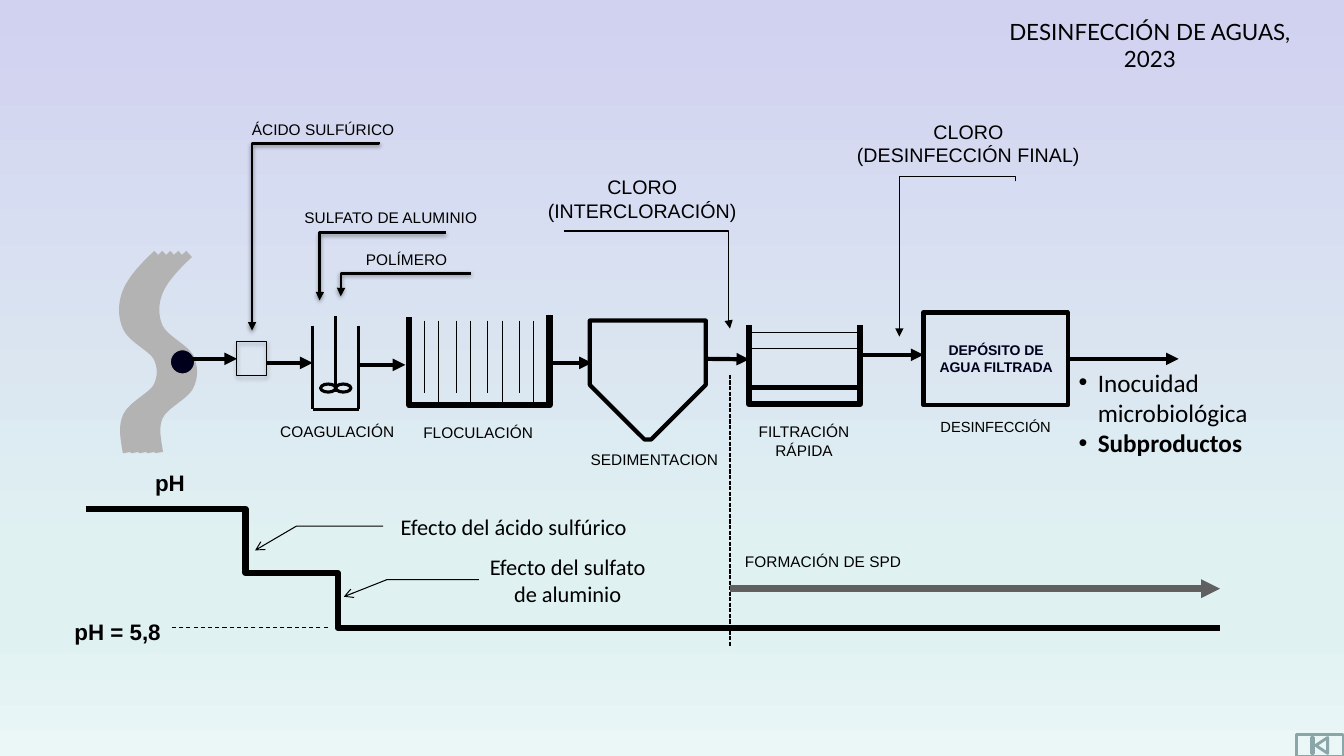
from lxml import etree
from pptx import Presentation
from pptx import util as u
from pptx.dml import color
from pptx.enum import dml, shapes, text
from pptx.oxml import ns

SHAPE = shapes.MSO_SHAPE
LEFT, MID = text.PP_ALIGN.LEFT, text.PP_ALIGN.CENTER


class Theme:
    black, navy, mud, gray, sage = "000000", "00001C", "B3B3B3", "606060", "8AA6A8"
    sky = [(0, "D1D1F0"), (74, "E0F1F2"), (83, "E0F1F2"), (100, "EBF6F7")]
    type = {
        "head": dict(name="Lato", size=u.Pt(16)),
        "tag": dict(name="Arial", size=u.Pt(11)),
        "small": dict(name="Arial", size=u.Pt(10.5)),
        "dose": dict(name="Arial", size=u.Pt(14)),
        "ph": dict(name="Arial", size=u.Pt(16), bold=True),
        "tank": dict(name="Arial", size=u.Pt(10), bold=True),
        "note": dict(name="Calibri", size=u.Pt(16)),
        "list": dict(name="Calibri", size=u.Pt(18)),
        "strong": dict(name="Calibri", size=u.Pt(18), bold=True),
    }


def node(parent, tag, **attrs):
    return etree.SubElement(parent, ns.qn(tag), {k: str(v) for k, v in attrs.items()})


class Scene:
    """Draws on one slide; lengths are columns and rows of a tenth of an inch."""
    unit = u.Inches(0.1)

    def __init__(self, deck, theme):
        self.theme = theme
        self.slide = deck.slides.add_slide(deck.slide_layouts[6])
        self.pool = self.slide.shapes

    def emu(self, *cells):
        return [round(cell * self.unit) for cell in cells]

    def group(self):
        self.pool = self.slide.shapes.add_group_shape().shapes

    def loose(self):
        self.pool = self.slide.shapes

    def sky(self):
        fill = self.slide.background.fill
        fill.gradient()
        fill.gradient_angle = 270
        stops = self.slide._element.find(".//" + ns.qn("a:gsLst"))
        for stop in list(stops):
            stops.remove(stop)
        for share, tint in self.theme.sky:
            node(node(stops, "a:gs", pos=share * 1000), "a:srgbClr", val=tint)

    def pen(self, item, width=3, tint=Theme.black, dash=None, tip=None, shade=False):
        """Set the outline, arrowhead and shadow of a shape or connector."""
        item.line.color.rgb = color.RGBColor.from_string(tint)
        for key, val in dict(width=u.Pt(width), dash_style=dash).items():
            setattr(item.line, key, val)
        props = item._element.spPr
        if tip:
            node(props.find(ns.qn("a:ln")), "a:tailEnd", type=tip)
        effect = node(props, "a:effectLst")
        if shade:
            cast = node(effect, "a:outerShdw", blurRad=u.Pt(3.1), dist=u.Pt(1.6),
                        dir=5400000, rotWithShape=0)
            node(node(cast, "a:srgbClr", val=Theme.black), "a:alpha", val=38000)
        return item

    def box(self, x, y, w, h, kind=SHAPE.RECTANGLE, fill=None, **fmt):
        item = self.pool.add_shape(kind, *self.emu(x, y, w, h))
        if fill:
            item.fill.solid()
            item.fill.fore_color.rgb = color.RGBColor.from_string(fill)
        else:
            item.fill.background()
        return self.pen(item, **fmt)

    def wire(self, x1, y1, x2, y2, **fmt):
        ends = self.emu(x1, y1, x2, y2)
        return self.pen(self.pool.add_connector(shapes.MSO_CONNECTOR.STRAIGHT, *ends), **fmt)

    def elbow(self, x1, y1, x2, y2, bend, turn=False, **fmt):
        """Bent connector; turn makes it leave downwards, for ends to the lower left."""
        if turn:
            cx, cy, w, h = (x1 + x2) / 2, (y1 + y2) / 2, y2 - y1, x1 - x2
            x1, y1, x2, y2 = cx - w / 2, cy - h / 2, cx + w / 2, cy + h / 2
        ends = self.emu(x1, y1, x2, y2)
        item = self.pool.add_connector(shapes.MSO_CONNECTOR.ELBOW, *ends)
        props = item._element.spPr
        if turn:
            props.find(ns.qn("a:xfrm")).set("rot", "5400000")
        guides = props.find(".//" + ns.qn("a:avLst"))
        node(guides, "a:gd", name="adj1", fmla=f"val {round(bend * 100000)}")
        return self.pen(item, **fmt)

    def trace(self, dots, **fmt):
        first, *rest = [self.emu(*dot) for dot in dots]
        form = self.pool.build_freeform(*first)
        form.add_line_segments(rest, close=False)
        item = form.convert_to_shape()
        item.fill.background()
        return self.pen(item, **fmt)

    def curve(self, dots, **fmt):
        """Joined cubic Bézier curves, each made of three of the traced points."""
        item = self.trace(dots, **fmt)
        legs = item._element.findall(".//" + ns.qn("a:lnTo"))
        for i in range(0, len(legs), 3):
            arc = node(legs[i].getparent(), "a:cubicBezTo")
            for leg in legs[i:i + 3]:
                arc.append(leg[0])
                leg.getparent().remove(leg)

    def text(self, x, y, w, h, style, *lines, align=LEFT, tint=Theme.black, lead=False):
        frame = self.pool.add_textbox(*self.emu(x, y, w, h)).text_frame
        frame.word_wrap = True
        frame.auto_size = text.MSO_AUTO_SIZE.SHAPE_TO_FIT_TEXT
        for i, line in enumerate(lines):
            para = frame.paragraphs[0] if i == 0 else frame.add_paragraph()
            para.alignment = align
            if lead:
                node(node(para._p.get_or_add_pPr(), "a:spcBef"), "a:spcPct", val=50000)
            run = para.add_run()
            run.text, look = line if isinstance(line, tuple) else (line, style)
            for key, val in self.theme.type[look].items():
                setattr(run.font, key, val)
            run.font.color.rgb = color.RGBColor.from_string(tint)
        return frame

    def list(self, *place):
        for para in self.text(*place).paragraphs:
            props = para._p.get_or_add_pPr()
            props.set("marL", str(u.Inches(0.19)))
            props.set("indent", str(-u.Inches(0.19)))
            node(props, "a:buFont", typeface="Arial")
            node(props, "a:buChar", char="•")


def river(s):
    bank = [(15.6, 25.2), (14.3, 26.4), (13.1, 27.7), (12.6, 28.9), (12.1, 30.1),
            (12.1, 31.4), (12.6, 32.5), (13.1, 33.6), (15.1, 34.5), (15.6, 35.4),
            (16.1, 36.4), (16.1, 37.4), (15.6, 38.4), (15.1, 39.3), (13.1, 40.2),
            (12.6, 41.3), (12.1, 42.4), (12.4, 43.6), (12.6, 44.9)]
    s.group()
    for strand in (3, 4, 0, 1, 2):
        s.curve([(x + 0.79 * strand, y) for x, y in bank], width=6, tint=Theme.mud)
    s.box(16.9, 34.7, 2.4, 2.4, SHAPE.OVAL, Theme.navy, width=0.75, tint=Theme.mud)
    s.loose()


def plant(s):
    mixer = s.box(23.5, 33.9, 2.9, 3.4, width=0.75, shade=True)
    s.wire(31, 40.6, 35.6, 40.6, width=2.25)
    s.group()
    for x in (31, 35.6):
        s.wire(x, 32.3, x, 40.6, width=2.25)
    for x in (31.8, 33.3):
        s.box(x, 38.1, 1.5, 0.8, SHAPE.OVAL, width=2.25)
    s.wire(33.3, 38.9, 33.3, 31.4, width=2.25)
    s.loose()

    s.trace([(40.6, 31.5), (40.6, 40.2), (54.5, 40.2), (54.5, 31.3)], width=4.5)
    for k in range(4):
        x = 42.1 + 3.15 * k
        s.wire(x, 31.8, x, 39, width=0.75)
        s.wire(x + 1.4, 31.8, x + 1.4, 40.2, width=0.75)

    basin = s.box(58.5, 31.8, 11.5, 11.8, SHAPE.SNIP_2_SAME_RECTANGLE)
    basin.rotation = 180
    basin.adjustments[0], basin.adjustments[1] = 0.471, 0

    s.group()
    bed = s.box(74.3, 33, 11, 5.3, width=1)
    s.text(72.65, 41.4, 14.2, 4.7, "tag", "FILTRACIÓN RÁPIDA", align=MID, lead=True)
    s.box(74.3, 38.5, 11, 1.6, width=2.25)
    s.box(74.3, 34.6, 11, 3.9, width=0.75)
    s.trace([(74.3, 32.2), (74.3, 40.1), (85.3, 40.1), (85.3, 32.2)], width=4.5)
    s.group()
    tank = s.box(91.6, 31, 14.3, 9.2)
    s.text(91.65, 33.4, 14.3, 4.4, "tank", "DEPÓSITO DE AGUA FILTRADA",
           align=MID, tint=Theme.navy, lead=True)
    s.loose()

    for x1, x2, y in ((26.5, 31, 36), (35.7, 40.2, 36.2), (54.6, 58.7, 36), (85, 91.6, 35.2)):
        s.wire(x1, y, x2, y, tip="triangle")
    s.wire(18.9, 35.6, 23.5, 35.6, tip="triangle").end_connect(mixer, 1)
    s.wire(70.1, 35.6, 74.3, 35.6, tip="triangle").end_connect(bed, 1)
    s.wire(105.8, 35.6, 116.9, 35.6, tip="triangle").begin_connect(tank, 3)


def doses(s):
    thick = dict(width=2, tip="triangle", shade=True)
    thin = dict(width=1, tip="triangle")
    s.elbow(44.2, 23.1, 31.7, 29.8, 0.998, **thick)
    s.elbow(46.7, 27.1, 33.8, 29.4, 0.998, **thick)
    s.elbow(37.6, 14.1, 25, 32.8, 0.008, turn=True, **thick)
    s.elbow(55.9, 22.9, 72.4, 32.6, 0.993, **thin)
    s.elbow(100.7, 18, 89.2, 33.4, -0.03, turn=True, **thin)


def levels(s):
    s.elbow(8.5, 50.5, 33.3, 56.85, 0.639, width=4.5)
    s.elbow(32.9, 56.85, 121, 62.3, 0.007, width=4.5)
    s.wire(32.5, 62.3, 16.9, 62.3, width=0.75, dash=dml.MSO_LINE.DASH)
    s.wire(72.4, 37.2, 72.4, 64.2, width=1, dash=dml.MSO_LINE.SQUARE_DOT)
    s.wire(72.4, 58.4, 121, 58.4, width=4.5, tint=Theme.gray, tip="triangle")
    for dots in ([(38, 52.2), (29.4, 52.2), (25.3, 54.6)],
                 [(47.5, 57.5), (38.4, 57.5), (34.1, 59.2)]):
        s.trace(dots, width=0.75, tip="arrow")


def labels(s):
    for row in ((29.2, 20.2, 20.1, 2.9, "tag", "SULFATO DE ALUMINIO"),
                (35.3, 24.3, 11.2, 2.9, "tag", "POLÍMERO"),
                (24, 11.4, 20.1, 2.9, "tag", "ÁCIDO SULFÚRICO"),
                (72.9, 54.3, 20.1, 2.9, "tag", "FORMACIÓN DE SPD"),
                (14.4, 46.1, 5.8, 3.7, "ph", "pH"),
                (6.4, 60.8, 12.3, 3.7, "ph", "pH = 5,8")):
        s.text(*row)
    for row in ((26.8, 41.4, 14.2, 2.9, "tag", "COAGULACIÓN"),
                (41, 41.5, 14.7, 2.9, "tag", "FLOCULACIÓN"),
                (57.6, 44.2, 16.6, 2.9, "tag", "SEDIMENTACION"),
                (92.3, 41, 13.4, 2.8, "small", "DESINFECCIÓN")):
        s.text(*row, lead=True)
    for row in ((98.2, 1.3, 31.7, 3.7, "head", "DESINFECCIÓN DE AGUAS, 2023"),
                (52.9, 16.9, 21.6, 5.7, "dose", "CLORO (INTERCLORACIÓN)"),
                (83.7, 11.4, 24.7, 5.7, "dose", "CLORO (DESINFECCIÓN FINAL)"),
                (38.6, 50.4, 24.7, 3.7, "note", "Efecto del ácido sulfúrico"),
                (47.5, 54.4, 17.6, 6.4, "note", "Efecto del sulfato de aluminio")):
        s.text(*row, align=MID)
    s.list(106, 35.9, 21.9, 10.1, "list", "Inocuidad microbiológica", ("Subproductos", "strong"))


def main():
    deck = Presentation()
    deck.slide_width, deck.slide_height = u.Inches(13.33), u.Inches(7.5)
    scene = Scene(deck, Theme)
    scene.sky()
    scene.box(128.6, 72.9, 4.6, 2.1, SHAPE.ACTION_BUTTON_BEGINNING, width=2, tint=Theme.sage)
    for part in (doses, river, plant, levels, labels):
        part(scene)
    deck.save("out.pptx")


if __name__ == "__main__":
    main()
